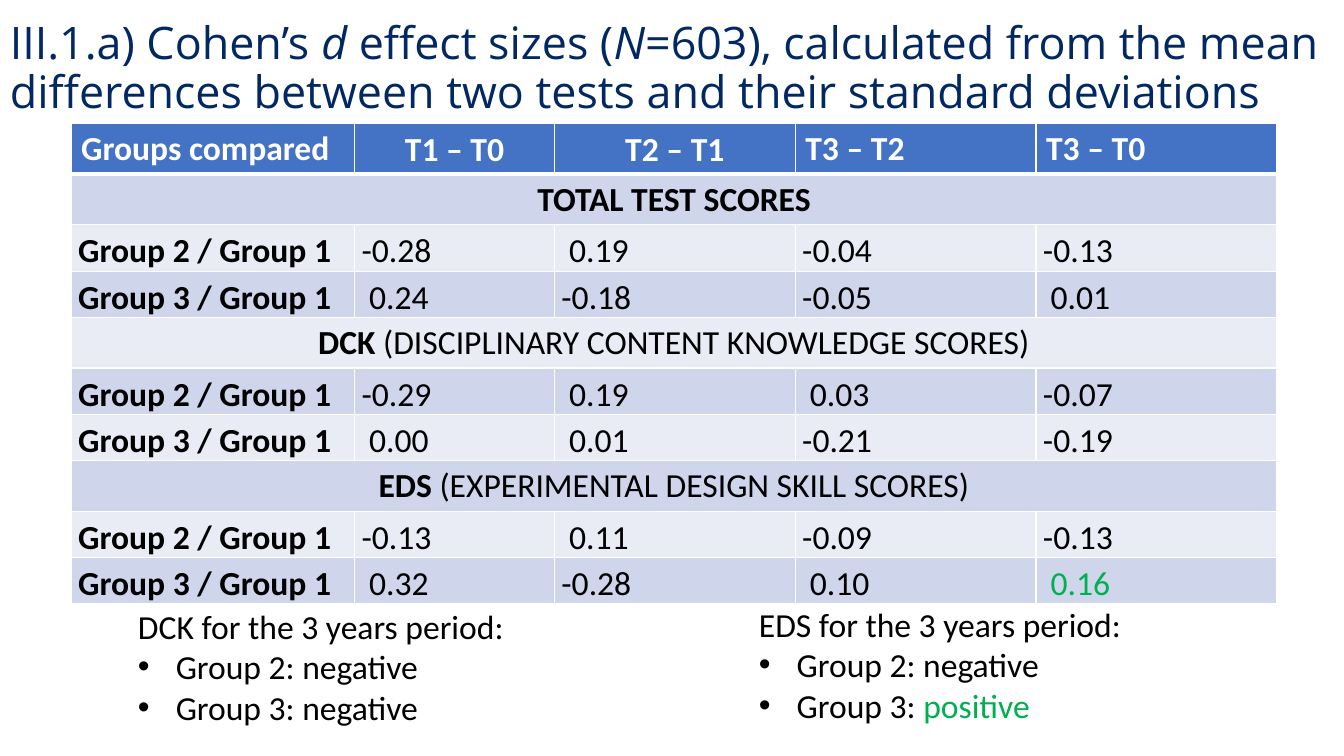
from dataclasses import dataclass

from lxml import etree
from pptx import Presentation
from pptx import util as u
from pptx.dml.color import RGBColor
from pptx.enum import text
from pptx.oxml import ns

Pt = u.Pt


@dataclass(frozen=True)
class Theme:
    """Colours, typefaces and type sizes of the slide."""
    navy: str = "012863"
    blue: str = "4472C4"
    dark_band: str = "CFD5EA"
    light_band: str = "E9EBF5"
    black: str = "000000"
    white: str = "FFFFFF"
    green: str = "00B050"
    title_face: str = "Open Sans"
    body_face: str = "Calibri"
    title_size: int = 32
    body_size: int = 24


THEME = Theme()
COLUMNS = (202.5, 142.8, 172, 172, 172)
ROW_HEIGHT = 29.5
HEADINGS = ("Groups compared", "T1 – T0", "T2 – T1", "T3 – T2", "T3 – T0")
SECTIONS = (
    ("TOTAL TEST SCORES", "",
     (-0.28, 0.19, -0.04, -0.13), (0.24, -0.18, -0.05, 0.01)),
    ("DCK ", "(DISCIPLINARY CONTENT KNOWLEDGE SCORES)",
     (-0.29, 0.19, 0.03, -0.07), (0.00, 0.01, -0.21, -0.19)),
    ("EDS ", "(EXPERIMENTAL DESIGN SKILL SCORES)",
     (-0.13, 0.11, -0.09, -0.13), (0.32, -0.28, 0.10, 0.16)),
)
HIGHLIGHT = (9, 4)


def add_xml(parent, tag, **attributes):
    """Append a DrawingML element and return it."""
    return etree.SubElement(parent, ns.qn(tag), attributes)


def write(para, *spans, face=THEME.body_face, size=THEME.body_size,
          color=THEME.black, bold=None):
    """Set the paragraph font and add (text, font overrides) spans."""
    font = para.font
    font.name, font.size, font.bold = face, Pt(size), bold
    font.color.rgb = RGBColor.from_string(color)
    for words, changes in spans:
        span = para.add_run()
        span.text = words
        span.font.bold = changes.get("bold")
        span.font.italic = changes.get("italic")
        if "color" in changes:
            span.font.color.rgb = RGBColor.from_string(changes["color"])


def add_title(page, left, top, width, height):
    """Place the slide title, centred vertically in its box."""
    frame = page.shapes.add_textbox(Pt(left), Pt(top), Pt(width), Pt(height)).text_frame
    frame.word_wrap = True
    frame.vertical_anchor = text.MSO_ANCHOR.MIDDLE
    para = frame.paragraphs[0]
    para.line_spacing = 0.9
    italic = {"italic": True}
    write(para, ("III.1.a) Cohen’s ", {}), ("d", italic), (" effect sizes (", {}),
          ("N", italic),
          ("=603), calculated from the mean differences between two tests "
           "and their standard deviations", {}),
          face=THEME.title_face, size=THEME.title_size, color=THEME.navy)


def style_cell(cell, fill, bottom=1):
    """Give a cell its white borders and its fill."""
    for side, points in (("L", 1), ("R", 1), ("T", 1), ("B", bottom)):
        line = add_xml(cell._tc.get_or_add_tcPr(), f"a:ln{side}", w=str(Pt(points)))
        add_xml(add_xml(line, "a:solidFill"), "a:srgbClr", val=THEME.white)
    cell.fill.solid()
    cell.fill.fore_color.rgb = RGBColor.from_string(fill)


def tighten(cell):
    """Use narrow margins and loose line spacing, and return the paragraph."""
    cell.margin_left = cell.margin_right = Pt(5)
    cell.margin_top = cell.margin_bottom = 0
    para = cell.text_frame.paragraphs[0]
    para.line_spacing, para.space_after = 1.15, Pt(10)
    return para


def fill_scores(table, row, label, scores):
    """Write one group comparison with its four effect sizes."""
    write(tighten(table.cell(row, 0)), (label, {}), bold=True)
    for column, score in enumerate(scores, 1):
        color = THEME.green if (row, column) == HIGHLIGHT else THEME.black
        write(tighten(table.cell(row, column)), (f"{score: .2f}", {}),
              color=color, bold=False)


def add_effect_table(page, left, top):
    """Place the table of effect sizes, in three sections."""
    rows = 1 + 3 * len(SECTIONS)
    table = page.shapes.add_table(rows, len(COLUMNS), Pt(left), Pt(top),
                                  Pt(sum(COLUMNS)), Pt(rows * ROW_HEIGHT)).table
    for column, width in zip(table.columns, COLUMNS):
        column.width = Pt(width)
    for index in range(rows):
        band = THEME.dark_band if index % 2 else THEME.light_band
        for cell in table.rows[index].cells:
            style_cell(cell, band if index else THEME.blue, 1 if index else 3)
    for column, heading in enumerate(HEADINGS):
        cell = table.cell(0, column)
        para = cell.text_frame.paragraphs[0]
        if column in (1, 2):
            para = tighten(cell)
            para.alignment = text.PP_ALIGN.CENTER
        write(para, (heading, {}), color=THEME.white, bold=True)
    for number, (name, meaning, *groups) in enumerate(SECTIONS):
        row = 1 + 3 * number
        banner = table.cell(row, 0)
        banner.merge(table.cell(row, len(COLUMNS) - 1))
        para = banner.text_frame.paragraphs[0]
        para.alignment = text.PP_ALIGN.CENTER
        spans = [(name, {"bold": True})]
        if meaning:
            spans.append((meaning, {"bold": False}))
        write(para, *spans)
        for step, scores in enumerate(groups, 1):
            fill_scores(table, row + step, f"Group {step + 1} / Group 1", scores)


def add_summary(page, left, top, width, height, heading, *items):
    """Place a heading with bulleted findings below it."""
    frame = page.shapes.add_textbox(Pt(left), Pt(top), Pt(width), Pt(height)).text_frame
    frame.word_wrap = False
    frame.auto_size = text.MSO_AUTO_SIZE.SHAPE_TO_FIT_TEXT
    write(frame.paragraphs[0], (heading, {}))
    for spans in items:
        para = frame.add_paragraph()
        props = para._p.get_or_add_pPr()
        props.set("marL", str(Pt(27)))
        props.set("indent", str(-Pt(27)))
        add_xml(props, "a:buFont", typeface="Arial")
        add_xml(props, "a:buChar", char="•")
        write(para, *spans)


def main():
    """Build the slide and save the deck."""
    deck = Presentation()
    deck.slide_width, deck.slide_height = Pt(960), Pt(540)
    page = deck.slides.add_slide(deck.slide_layouts[6])
    add_title(page, 0, 0, 973.5, 99.4)
    add_effect_table(page, 50.8, 88.5)
    negative = [("Group 2: negative", {})]
    add_summary(page, 91.5, 429.2, 283.7, 94.5, "DCK for the 3 years period:",
                negative, [("Group 3: negative", {})])
    add_summary(page, 535, 427.8, 280.8, 94.5, "EDS for the 3 years period:",
                negative, [("Group 3: ", {}), ("positive", {"color": THEME.green})])
    deck.save("out.pptx")


if __name__ == "__main__":
    main()
